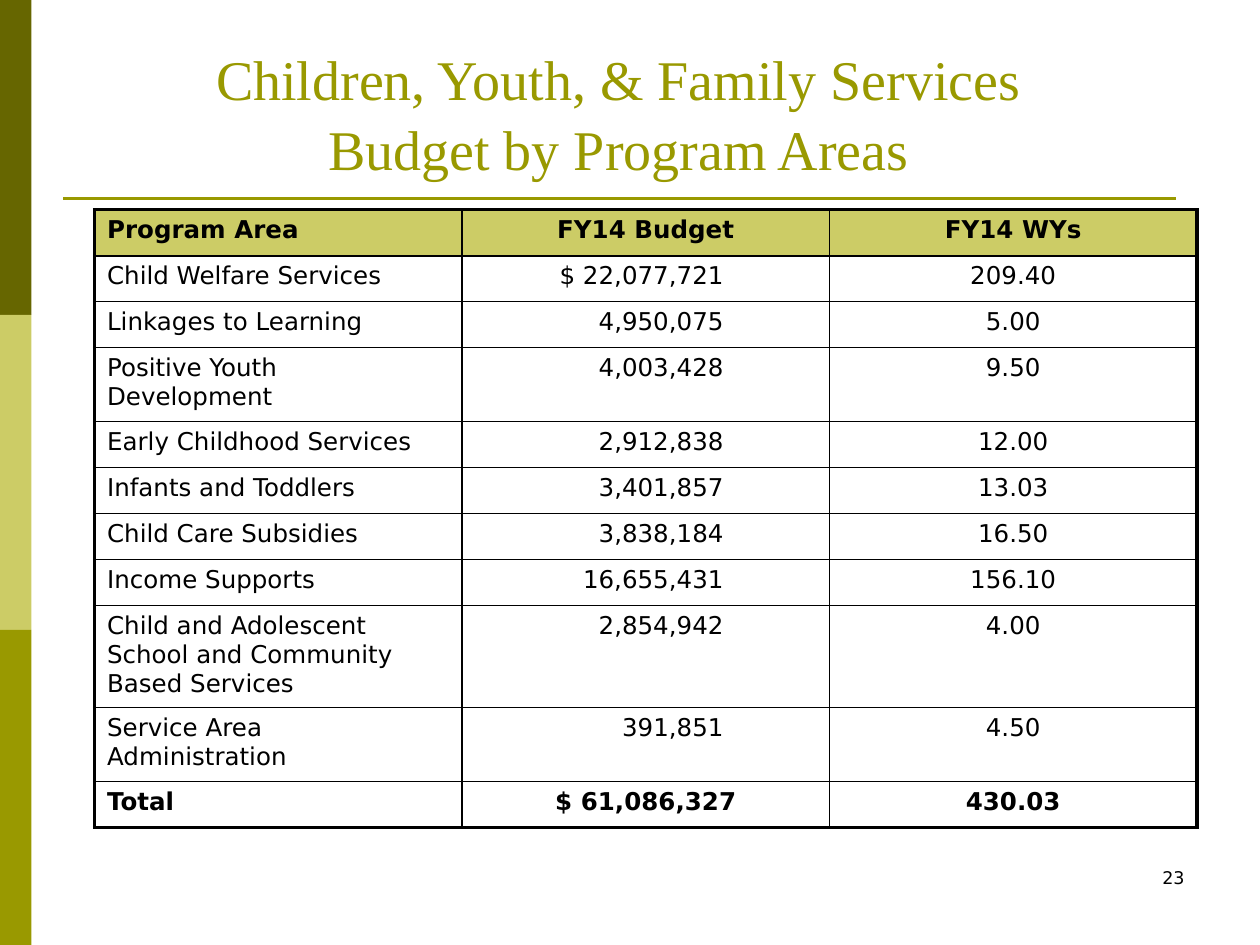
from dataclasses import dataclass

from lxml.etree import SubElement
from pptx import Presentation
from pptx.dml.color import RGBColor
from pptx.enum.shapes import MSO_CONNECTOR, MSO_SHAPE
from pptx.enum.text import MSO_ANCHOR, PP_ALIGN
from pptx.oxml.ns import qn
from pptx.util import Inches, Pt


@dataclass(frozen=True)
class Theme:
    dark: str = "666600"
    light: str = "CCCC66"
    accent: str = "999900"
    ink: str = "000000"
    title_font: str = "Times New Roman"
    body_font: str = "DejaVu Sans"
    title_size: float = 32
    body_size: float = 14
    number_size: float = 10
    rule: float = 1.5
    inner_border: float = 1
    outer_border: float = 2.25


@dataclass(frozen=True)
class Program:
    area: str
    budget: str
    work_years: str
    lines: int = 1
    bold: bool = False


THEME = Theme()
WIDTH, HEIGHT = Inches(10), Inches(7.5)
LINE_HEIGHT, ROW_PADDING = Pt(16), Pt(10.3)
BUDGET_INDENT = Inches(0.84)

PROGRAMS = [
    Program("Program Area", "FY14 Budget", "FY14 WYs", bold=True),
    Program("Child Welfare Services", "$ 22,077,721", "209.40"),
    Program("Linkages to Learning", "4,950,075", "5.00"),
    Program("Positive Youth Development", "4,003,428", "9.50", lines=2),
    Program("Early Childhood Services", "2,912,838", "12.00"),
    Program("Infants and Toddlers", "3,401,857", "13.03"),
    Program("Child Care Subsidies", "3,838,184", "16.50"),
    Program("Income Supports", "16,655,431", "156.10"),
    Program("Child and Adolescent School and Community Based Services",
            "2,854,942", "4.00", lines=3),
    Program("Service Area Administration", "391,851", "4.50", lines=2),
    Program("Total", "$ 61,086,327", "430.03", bold=True),
]


def across(share: float) -> int:
    return round(WIDTH * share)


def down(share: float) -> int:
    return round(HEIGHT * share)


def write(frame, text: str, *, size: float = THEME.body_size, font: str = THEME.body_font,
          color: str = THEME.ink, bold: bool = False, align=PP_ALIGN.LEFT,
          spacing: float = 1.0) -> None:
    frame.word_wrap = True
    paragraph = frame.paragraphs[0]
    paragraph.text = text
    paragraph.alignment = align
    paragraph.line_spacing = spacing
    for run in paragraph.runs:
        run.font.size = Pt(size)
        run.font.name = font
        run.font.bold = bold
        run.font.color.rgb = RGBColor.from_string(color)


def add_side_bands(slide, colors: list[str]) -> None:
    share = 1 / len(colors)
    for index, color in enumerate(colors):
        band = slide.shapes.add_shape(MSO_SHAPE.RECTANGLE, 0, down(index * share),
                                      across(0.025), down(share))
        band.shadow.inherit = False
        band.fill.solid()
        band.fill.fore_color.rgb = RGBColor.from_string(color)
        band.line.fill.background()


def add_title_rule(slide) -> None:
    level = down(0.21)
    rule = slide.shapes.add_connector(MSO_CONNECTOR.STRAIGHT,
                                      across(0.05), level, across(0.933), level)
    rule.line.color.rgb = RGBColor.from_string(THEME.accent)
    rule.line.width = Pt(THEME.rule)
    SubElement(rule.element.spPr, qn("a:effectLst"))


def set_borders(cell, outer_sides: dict[str, bool]) -> None:
    """Draw all four borders, heavier on the sides that edge the table."""
    properties = cell._tc.get_or_add_tcPr()
    for position, (side, is_outer) in enumerate(outer_sides.items()):
        points = THEME.outer_border if is_outer else THEME.inner_border
        border = properties.makeelement(qn(f"a:{side}"), {"w": str(int(Pt(points)))})
        fill = SubElement(border, qn("a:solidFill"))
        SubElement(fill, qn("a:srgbClr"), val=THEME.ink)
        properties.insert(position, border)


def add_budget_table(slide, programs: list[Program]) -> None:
    heights = [ROW_PADDING + program.lines * LINE_HEIGHT for program in programs]
    table = slide.shapes.add_table(len(programs), 3, across(0.075), down(0.222),
                                   across(0.875), sum(heights)).table
    table.first_row = table.horz_banding = False
    last_row, last_column = len(programs) - 1, 2
    for row, program in enumerate(programs):
        table.rows[row].height = heights[row]
        figures = PP_ALIGN.CENTER if program.bold else PP_ALIGN.RIGHT
        columns = [(program.area, PP_ALIGN.LEFT), (program.budget, figures),
                   (program.work_years, PP_ALIGN.CENTER)]
        for column, (text, align) in enumerate(columns):
            cell = table.cell(row, column)
            write(cell.text_frame, text, bold=program.bold, align=align)
            if align == PP_ALIGN.RIGHT:
                cell.margin_right = BUDGET_INDENT
            if row == 0:
                cell.fill.solid()
                cell.fill.fore_color.rgb = RGBColor.from_string(THEME.light)
            else:
                cell.fill.background()
            set_borders(cell, {"lnL": column == 0, "lnR": column == last_column,
                               "lnT": row == 0, "lnB": row == last_row})


def main() -> None:
    deck = Presentation()
    deck.slide_width, deck.slide_height = WIDTH, HEIGHT
    slide = deck.slides.add_slide(deck.slide_layouts[6])

    add_side_bands(slide, [THEME.dark, THEME.light, THEME.accent])
    add_title_rule(slide)

    title = slide.shapes.add_textbox(across(0.1), down(0.068), across(0.782), down(0.131))
    title.text_frame.vertical_anchor = MSO_ANCHOR.BOTTOM
    write(title.text_frame, "Children, Youth, & Family Services\vBudget by Program Areas",
          size=THEME.title_size, font=THEME.title_font, color=THEME.accent,
          align=PP_ALIGN.CENTER, spacing=1.04)

    add_budget_table(slide, PROGRAMS)

    page_number = slide.shapes.add_textbox(across(0.717), down(0.911),
                                           across(0.233), down(0.067))
    write(page_number.text_frame, "23", size=THEME.number_size, align=PP_ALIGN.RIGHT)

    deck.save("out.pptx")


if __name__ == "__main__":
    main()
